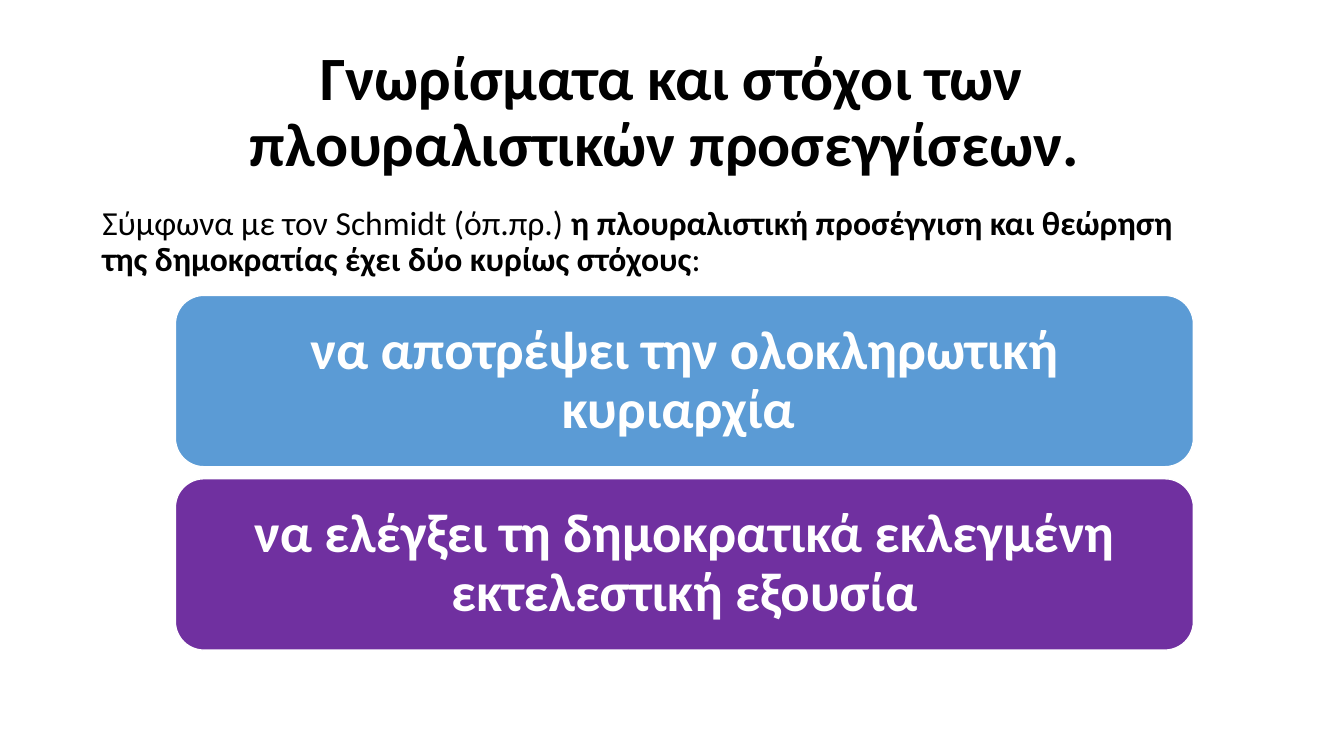
from pptx import Presentation
from pptx.dml.color import RGBColor
from pptx.enum.shapes import MSO_SHAPE
from pptx.enum.text import MSO_ANCHOR, PP_ALIGN
from pptx.util import Pt

ROUNDED = MSO_SHAPE.ROUNDED_RECTANGLE
TOP, MIDDLE = MSO_ANCHOR.TOP, MSO_ANCHOR.MIDDLE
LEFT, CENTER = PP_ALIGN.LEFT, PP_ALIGN.CENTER

FONT = "Calibri"
BLACK, WHITE = "000000", "FFFFFF"

TITLE = [("Γνωρίσματα και στόχοι των πλουραλιστικών προσεγγίσεων. ", True)]
INTRO = [
    ("Σύμφωνα με τον Schmidt (όπ.πρ.) ", False),
    ("η πλουραλιστική προσέγγιση και θεώρηση της δημοκρατίας "
     "έχει δύο κυρίως στόχους", True),
    (":", False),
]
GOALS = [
    ("να αποτρέψει την ολοκληρωτική κυριαρχία ", "5B9BD5"),
    ("να ελέγξει τη δημοκρατικά εκλεγμένη εκτελεστική εξουσία", "7030A0"),
]

TITLE_AREA = (66, 28.8, 828, 104.4)
INTRO_AREA = (66, 144, 808, 343)
CARD_LEFT, CARD_TOP, CARD_WIDTH, CARD_HEIGHT = 125.3, 211, 727.2, 122.4
CARD_PITCH = 131
CARD_INSET = 17.5


def color(value):
    return RGBColor.from_string(value)


def points(*values):
    return [Pt(value) for value in values]


def write(shape, spans, size, ink=BLACK, align=LEFT, anchor=TOP,
          inset=(7.2, 3.6), before=0):
    frame = shape.text_frame
    frame.word_wrap = True
    frame.vertical_anchor = anchor
    frame.margin_left = frame.margin_right = Pt(inset[0])
    frame.margin_top = frame.margin_bottom = Pt(inset[1])
    para = frame.paragraphs[0]
    para.alignment = align
    para.line_spacing = 0.9
    para.space_before = Pt(before)
    for text, bold in spans:
        span = para.add_run()
        span.text = text
        span.font.name = FONT
        span.font.size = Pt(size)
        span.font.bold = bold
        span.font.color.rgb = color(ink)


def add_card(page, top, text, fill):
    card = page.shapes.add_shape(
        ROUNDED, *points(CARD_LEFT, top, CARD_WIDTH, CARD_HEIGHT))
    card.shadow.inherit = False
    card.fill.solid()
    card.fill.fore_color.rgb = color(fill)
    card.line.color.rgb = color(WHITE)
    card.line.width = Pt(1)
    write(card, [(text, True)], 39, ink=WHITE, align=CENTER, anchor=MIDDLE,
          inset=(CARD_INSET, CARD_INSET))


def main():
    deck = Presentation()
    deck.slide_width, deck.slide_height = points(960, 540)
    page = deck.slides.add_slide(deck.slide_layouts[6])

    title = page.shapes.add_textbox(*points(*TITLE_AREA))
    write(title, TITLE, 44, align=CENTER, anchor=MIDDLE)
    intro = page.shapes.add_textbox(*points(*INTRO_AREA))
    write(intro, INTRO, 24, before=10)

    for index, (text, fill) in enumerate(GOALS):
        add_card(page, CARD_TOP + index * CARD_PITCH, text, fill)

    deck.save("out.pptx")


if __name__ == "__main__":
    main()
